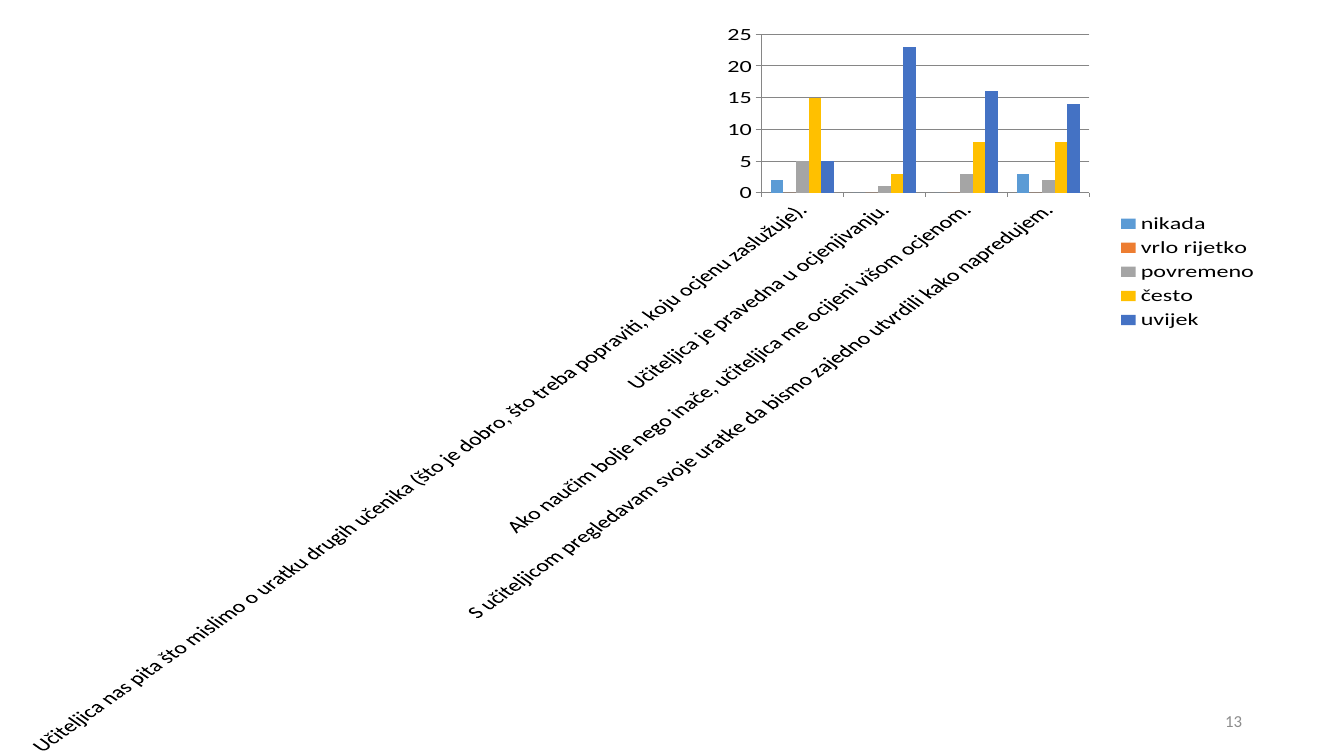
from dataclasses import dataclass

from pptx import Presentation
from pptx.chart.data import CategoryChartData
from pptx.dml.color import RGBColor
from pptx.enum.chart import XL_CHART_TYPE, XL_LEGEND_POSITION, XL_TICK_MARK
from pptx.enum.text import MSO_ANCHOR, PP_ALIGN
from pptx.util import Emu, Pt

STATEMENTS = [
    "Učiteljica nas pita što mislimo o uratku drugih učenika "
    "(što je dobro, što treba popraviti, koju ocjenu zaslužuje).",
    "Učiteljica je pravedna u ocjenjivanju.",
    "Ako naučim bolje nego inače, učiteljica me ocijeni višom ocjenom.",
    "S učiteljicom pregledavam svoje uratke da bismo zajedno utvrdili kako napredujem.",
]
ANSWERS = [
    ("nikada", (2, 0, 0, 3), "5B9BD5"),
    ("vrlo rijetko", (0, 0, 0, 0), "ED7D31"),
    ("povremeno", (5, 1, 3, 2), "A5A5A5"),
    ("često", (15, 3, 8, 8), "FFC000"),
    ("uvijek", (5, 23, 16, 14), "4472C4"),
]
PAGE_NUMBER = "13"

SLIDE_SIZE = (1344, 756)
CHART_BOX = (26, 24, 1244, 732)
NUMBER_BOX = (950, 701, 302, 40)
EMU_PER_PX = 914400 / 100.8


@dataclass(frozen=True)
class Theme:
    font: str = "Calibri"
    chart_size: int = 18
    number_size: int = 12
    ink: str = "000000"
    muted: str = "8C8C8C"
    rule: str = "868686"


THEME = Theme()


def px(*lengths):
    return [Emu(round(length * EMU_PER_PX)) for length in lengths]


def style_font(font, size, color):
    font.name = THEME.font
    font.size = Pt(size)
    font.color.rgb = RGBColor.from_string(color)


def add_text(slide, text, box, *, size, color, align, anchor):
    frame = slide.shapes.add_textbox(*px(*box)).text_frame
    frame.word_wrap = True
    frame.vertical_anchor = anchor
    paragraph = frame.paragraphs[0]
    paragraph.alignment = align
    run = paragraph.add_run()
    run.text = text
    style_font(run.font, size, color)


def add_answer_chart(slide):
    answers = CategoryChartData(number_format="General")
    answers.categories = STATEMENTS
    for name, counts, _ in ANSWERS:
        answers.add_series(name, counts)
    chart = slide.shapes.add_chart(
        XL_CHART_TYPE.COLUMN_CLUSTERED, *px(*CHART_BOX), answers
    ).chart
    style_font(chart.font, THEME.chart_size, THEME.ink)
    chart.has_title = False
    chart.has_legend = True
    chart.legend.position = XL_LEGEND_POSITION.RIGHT
    chart.legend.include_in_layout = False

    columns = chart.plots[0]
    columns.gap_width = 150
    columns.vary_by_categories = False
    for series, (_, _, color) in zip(columns.series, ANSWERS):
        series.format.fill.solid()
        series.format.fill.fore_color.rgb = RGBColor.from_string(color)

    counts_axis = chart.value_axis
    counts_axis.has_major_gridlines = True
    for axis in (chart.category_axis, counts_axis):
        axis.major_tick_mark = XL_TICK_MARK.OUTSIDE
    for part in (chart.category_axis, counts_axis, counts_axis.major_gridlines):
        part.format.line.color.rgb = RGBColor.from_string(THEME.rule)
        part.format.line.width = Pt(0.75)


def main():
    deck = Presentation()
    deck.slide_width, deck.slide_height = px(*SLIDE_SIZE)
    slide = deck.slides.add_slide(deck.slide_layouts[6])
    add_answer_chart(slide)
    add_text(slide, PAGE_NUMBER, NUMBER_BOX, size=THEME.number_size,
             color=THEME.muted, align=PP_ALIGN.RIGHT, anchor=MSO_ANCHOR.MIDDLE)
    deck.save("out.pptx")


if __name__ == "__main__":
    main()
